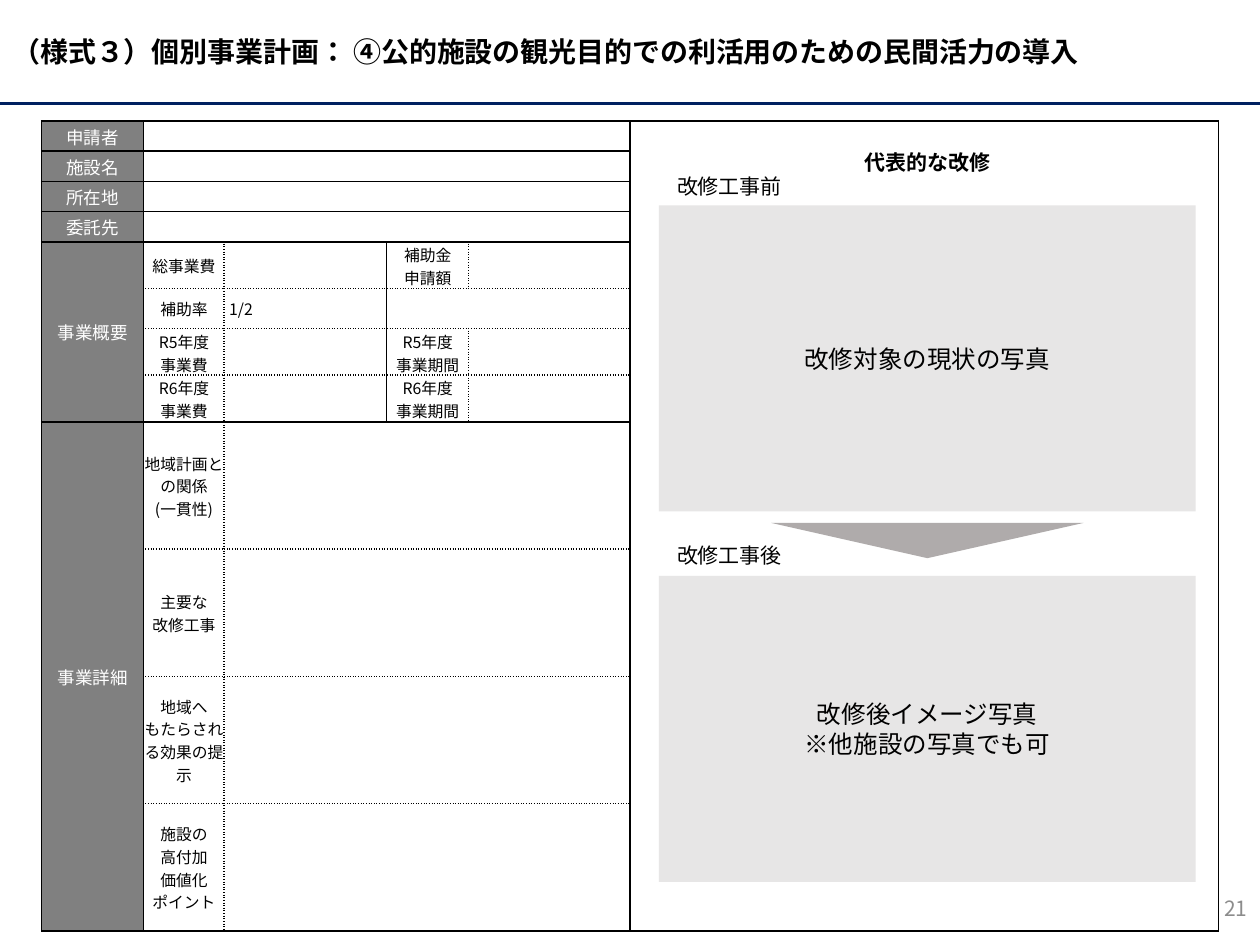
from lxml.etree import SubElement
from pptx import Presentation
from pptx.dml.color import RGBColor
from pptx.enum.lang import MSO_LANGUAGE_ID
from pptx.enum.shapes import MSO_CONNECTOR, MSO_SHAPE
from pptx.enum.text import MSO_ANCHOR, PP_ALIGN
from pptx.oxml.ns import qn
from pptx.util import Inches, Pt

FONT = "Noto Sans CJK JP"
COLORS = {"black": "000000", "white": "FFFFFF", "navy": "002060", "head": "808080",
          "photo": "E7E6E6", "arrow": "AFABAB", "number": "8C8C8C"}
COLUMNS = [0.81, 0.64, 1.29, 0.65, 1.28, 4.67]
ROWS = [0.24] * 4 + [0.37, 0.32, 0.37, 0.37] + [1.01] * 4
BLOCK_STARTS, BLOCK_ENDS = (4, 8), (7, 11)
COST_ROWS_SPLIT = (4, 6, 7)

HEADINGS = {0: "申請者", 1: "施設名", 2: "所在地", 3: "委託先", 4: "事業概要", 8: "事業詳細"}
ITEMS = {
    (4, 1): "総事業費", (4, 3): "補助金\n申請額",
    (5, 1): "補助率", (5, 2): "1/2",
    (6, 1): "R5年度\n事業費", (6, 3): "R5年度\n事業期間",
    (7, 1): "R6年度\n事業費", (7, 3): "R6年度\n事業期間",
    (8, 1): "地域計画との関係\n(一貫性)",
    (9, 1): "主要な\n改修工事",
    (10, 1): "地域へ\nもたらされる効果の提示",
    (11, 1): "施設の\n高付加\n価値化\nポイント",
}
# (first row, first column, last row, last column)
MERGES = ([(r, 1, r, 4) for r in range(4)]
          + [(0, 5, 11, 5), (4, 0, 7, 0), (8, 0, 11, 0), (5, 3, 5, 4)]
          + [(r, 2, r, 4) for r in range(8, 12)])


def rgb(name):
    return RGBColor.from_string(COLORS[name])


def write(tf, text, size, color="black", bold=False, align=PP_ALIGN.CENTER):
    font = {"size": Pt(size), "bold": bold, "name": FONT,
            "language_id": MSO_LANGUAGE_ID.JAPANESE}
    for i, line in enumerate(text.split("\n")):
        p = tf.paragraphs[0] if i == 0 else tf.add_paragraph()
        p.alignment = align
        r = p.add_run()
        r.text = line
        for key, value in font.items():
            setattr(r.font, key, value)
        r.font.color.rgb = rgb(color)
        SubElement(r.font._element, qn("a:ea"), typeface=FONT)


def add_label(slide, box, text, size, inset=0, **style):
    tf = slide.shapes.add_textbox(*map(Inches, box)).text_frame
    frame = {"word_wrap": True, "vertical_anchor": MSO_ANCHOR.MIDDLE,
             "margin_left": Inches(inset), "margin_right": Inches(inset),
             "margin_top": 0, "margin_bottom": 0}
    for key, value in frame.items():
        setattr(tf, key, value)
    write(tf, text, size, **style)


def add_block(slide, kind, box, color, text=None):
    sp = slide.shapes.add_shape(kind, *map(Inches, box))
    sp.shadow.inherit = False
    sp.fill.solid()
    sp.fill.fore_color.rgb = rgb(color)
    sp.line.fill.background()
    if text:
        sp.text_frame.word_wrap = True
        sp.text_frame.vertical_anchor = MSO_ANCHOR.MIDDLE
        write(sp.text_frame, text, 14)
    return sp


def add_rule(slide, y):
    line = slide.shapes.add_connector(MSO_CONNECTOR.STRAIGHT, 0, Inches(y), Inches(10), Inches(y))
    line.line.color.rgb = rgb("navy")
    line.line.width = Pt(1.5)
    SubElement(line._element.spPr, qn("a:effectLst"))


def dotted_sides(row, col):
    """Sides of a cell that lie inside the overview and detail blocks."""
    if row < 4 or col in (0, 5):
        return ""
    sides = ""
    if col == 1 or (col == 3 and row in COST_ROWS_SPLIT):
        sides += "R"
    if col == 2 or (col == 4 and row in COST_ROWS_SPLIT):
        sides += "L"
    if row not in BLOCK_STARTS:
        sides += "T"
    if row not in BLOCK_ENDS:
        sides += "B"
    return sides


def set_borders(cell, dotted):
    tcPr = cell._tc.get_or_add_tcPr()
    for side in "LRTB":
        ln = SubElement(tcPr, qn(f"a:ln{side}"), w=str(Pt(1)))
        fill = SubElement(ln, qn("a:solidFill"))
        SubElement(fill, qn("a:srgbClr"), val=COLORS["black"])
        SubElement(ln, qn("a:prstDash"), val="sysDot" if side in dotted else "solid")


def side_margin(row, col):
    if col == 1 and row >= 8:
        return 0  # five characters fill the whole column
    if 4 <= row < 8 and col in (1, 2) or col == 3 and row > 4:
        return Inches(0.04)
    return Inches(0.01)


def format_cell(cell, row, col):
    side = side_margin(row, col)
    layout = {"vertical_anchor": MSO_ANCHOR.MIDDLE, "margin_left": side, "margin_right": side,
              "margin_top": Inches(0.01), "margin_bottom": 0}
    for key, value in layout.items():
        setattr(cell, key, value)
    set_borders(cell, dotted_sides(row, col))
    if col in (0, 5):
        cell.fill.solid()
        cell.fill.fore_color.rgb = rgb("head" if col == 0 else "white")
    else:
        cell.fill.background()

    if col == 0 and row in HEADINGS:
        write(cell.text_frame, HEADINGS[row], 10, "white")
    elif (row, col) in ITEMS:
        align = PP_ALIGN.LEFT if col == 2 else PP_ALIGN.CENTER
        write(cell.text_frame, ITEMS[row, col], 9, align=align)
    else:
        # an empty cell must not stretch its row
        SubElement(cell.text_frame.paragraphs[0]._p, qn("a:endParaRPr"), sz="900")


def add_plan_table(slide):
    frame = slide.shapes.add_table(len(ROWS), len(COLUMNS), Inches(0.33), Inches(0.96),
                                   Inches(sum(COLUMNS)), Inches(sum(ROWS)))
    table = frame.table
    table.first_row = table.horz_banding = False
    for column, width in zip(table.columns, COLUMNS):
        column.width = Inches(width)
    for row, height in zip(table.rows, ROWS):
        row.height = Inches(height)
    for r in range(len(ROWS)):
        for c in range(len(COLUMNS)):
            format_cell(table.cell(r, c), r, c)
    for top, left, bottom, right in MERGES:
        table.cell(top, left).merge(table.cell(bottom, right))


def main():
    prs = Presentation()
    prs.slide_width, prs.slide_height = Inches(10), Inches(7.5)
    slide = prs.slides.add_slide(prs.slide_layouts[6])

    add_rule(slide, 0.82)
    add_label(slide, (0, 0, 10, 0.82),
              "（様式３）個別事業計画： ④公的施設の観光目的での利活用のための民間活力の導入",
              16, inset=0.1, bold=True, align=PP_ALIGN.LEFT)
    add_plan_table(slide)
    add_label(slide, (7.75, 7.01, 2.25, 0.4), "21", 12, inset=0.1,
              color="number", align=PP_ALIGN.RIGHT)

    for y, text in ((1.36, "改修工事前"), (4.29, "改修工事後")):
        add_label(slide, (5.15, y, 1.28, 0.23), text, 12)
    for y, text in ((1.63, "改修対象の現状の写真"),
                    (4.57, "改修後イメージ写真\n※他施設の写真でも可")):
        add_block(slide, MSO_SHAPE.RECTANGLE, (5.23, y, 4.26, 2.43), "photo", text)
    arrow = add_block(slide, MSO_SHAPE.ISOSCELES_TRIANGLE, (6.12, 4.15, 2.48, 0.28), "arrow")
    arrow.rotation = 180
    add_label(slide, (5.23, 1.21, 4.26, 0.16), "代表的な改修", 12, bold=True)

    prs.save("out.pptx")


if __name__ == "__main__":
    main()
